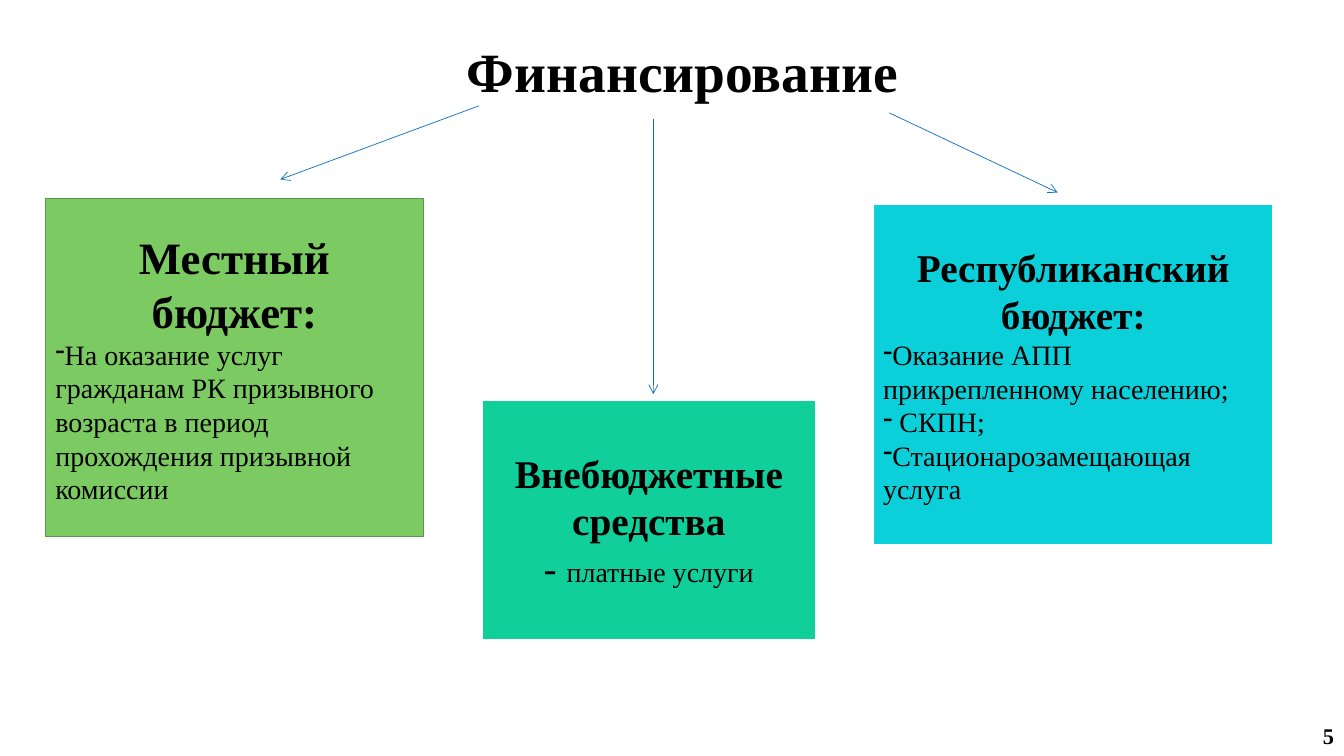
from dataclasses import dataclass

from lxml import etree
from pptx import Presentation
from pptx.dml.color import RGBColor
from pptx.enum.shapes import MSO_CONNECTOR, MSO_SHAPE
from pptx.enum.text import MSO_ANCHOR, PP_ALIGN
from pptx.oxml.ns import qn
from pptx.util import Pt

LEFT, CENTER, RIGHT = PP_ALIGN.LEFT, PP_ALIGN.CENTER, PP_ALIGN.RIGHT
MIDDLE = MSO_ANCHOR.MIDDLE
RECT = MSO_SHAPE.RECTANGLE
STRAIGHT = MSO_CONNECTOR.STRAIGHT
SCALE = 9144  # EMU per px, 100 px to the inch
FONT = "Times New Roman"
COLORS = {
    "black": "000000", "white": "FFFFFF", "blue": "0F6FC6",
    "green": "7CCA62", "moss": "5C9549", "cyan": "0BD0D9", "mint": "10CF9B",
}


@dataclass
class Arrow:
    start: tuple[int, int]
    end: tuple[int, int]


@dataclass
class Card:
    box: tuple[int, int, int, int]
    fill: str
    edge: str
    width: float
    head: str
    size: int
    items: tuple[str, ...] = ()
    note: str = ""


ARROWS = [
    Arrow((475, 105), (278, 178)),
    Arrow((882, 112), (1049, 191)),
    Arrow((648, 118), (648, 391)),
]
CARDS = [
    Card((45, 197, 375, 335), "green", "moss", 1, "Местный бюджет:", 32,
         ("На оказание услуг гражданам РК призывного возраста "
          "в период прохождения призывной комиссии",)),
    Card((866, 202, 397, 339), "cyan", "white", 1.5,
         "Республиканский бюджет:", 28,
         ("Оказание АПП прикрепленному населению;", " СКПН;",
          "Стационарозамещающая услуга")),
    Card((478, 397, 331, 238), "mint", "white", 1.5,
         "Внебюджетные средства", 28, note="платные услуги"),
]


def px(*values: int) -> list[int]:
    return [value * SCALE for value in values]


def color(name: str) -> RGBColor:
    return RGBColor.from_string(COLORS[name])


def write(para, text: str, *, size: float, bold: bool = False,
          align=LEFT, bullet: str = "") -> None:
    """Add a formatted run to a paragraph, with an optional bullet."""
    para.alignment = align
    if bullet:
        props = para._p.get_or_add_pPr()
        props.set("marL", "0")
        props.set("indent", "0")
        etree.SubElement(props, qn("a:buFontTx"))
        etree.SubElement(props, qn("a:buChar")).set("char", bullet)
    run = para.add_run()
    run.text = text
    font = run.font
    font.name, font.size, font.bold = FONT, Pt(size), bold
    font.color.rgb = color("black")


def add_label(slide, box: tuple[int, int, int, int], text: str,
              spacing: float = 1, **style) -> None:
    frame = slide.shapes.add_textbox(*px(*box)).text_frame
    frame.word_wrap = True
    frame.vertical_anchor = MIDDLE
    para = frame.paragraphs[0]
    para.line_spacing = spacing
    write(para, text, bold=True, **style)


def add_arrow(slide, arrow: Arrow) -> None:
    link = slide.shapes.add_connector(STRAIGHT, *px(*arrow.start, *arrow.end))
    link.line.color.rgb = color("blue")
    link.line.width = Pt(0.5)
    tail = etree.SubElement(link.line._get_or_add_ln(), qn("a:tailEnd"))
    tail.set("type", "arrow")
    etree.SubElement(link._element.spPr, qn("a:effectLst"))


def add_card(slide, card: Card) -> None:
    shape = slide.shapes.add_shape(RECT, *px(*card.box))
    shape.shadow.inherit = False
    shape.fill.solid()
    shape.fill.fore_color.rgb = color(card.fill)
    shape.line.color.rgb = color(card.edge)
    shape.line.width = Pt(card.width)
    frame = shape.text_frame
    frame.word_wrap = True
    frame.vertical_anchor = MIDDLE
    write(frame.paragraphs[0], card.head, size=card.size, bold=True,
          align=CENTER)
    for item in card.items:
        write(frame.add_paragraph(), item, size=20, bullet="-")
    if card.note:
        para = frame.add_paragraph()
        write(para, "- ", size=card.size, align=CENTER)
        write(para, card.note, size=20, align=CENTER)


def main() -> None:
    deck = Presentation()
    deck.slide_width, deck.slide_height = px(1333, 750)
    slide = deck.slides.add_slide(deck.slide_layouts[6])
    add_label(slide, (412, 37, 530, 74), "Финансирование", spacing=0.9,
              size=39.6, align=CENTER)
    for arrow in ARROWS:
        add_arrow(slide, arrow)
    for card in CARDS:
        add_card(slide, card)
    add_label(slide, (1022, 710, 311, 40), "5", size=16, align=RIGHT)
    deck.save("out.pptx")


if __name__ == "__main__":
    main()
